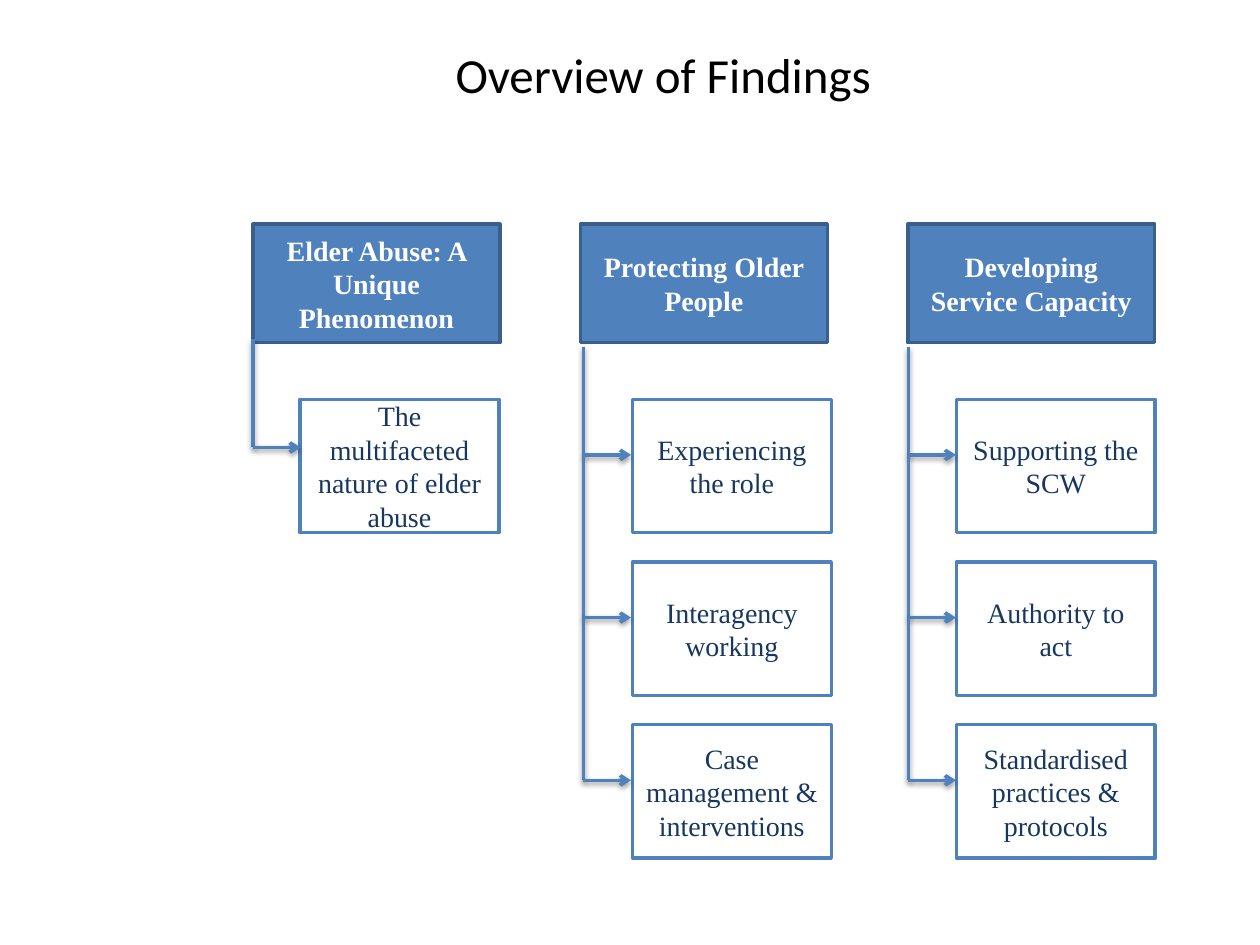
import pptx
import pptx.util
import pptx.dml.color
import pptx.enum.shapes
import pptx.enum.text
import pptx.oxml
import pptx.oxml.ns
from pptx.util import Cm, Pt

TITLE = "Overview of Findings"

# Lengths in centimetres: trunk and children are the left edges below each heading.
COLUMNS = [
    {"heading": "Elder Abuse: A Unique Phenomenon", "trunk": 5.1, "children": 6.05,
     "trunk_top": 6.84,
     "topics": ["The multifaceted nature of elder abuse"]},
    {"heading": "Protecting Older People", "trunk": 11.76, "children": 12.75,
     "trunk_top": 6.99,
     "topics": ["Experiencing the role", "Interagency working",
                "Case management & interventions"]},
    {"heading": "Developing Service Capacity", "trunk": 18.31, "children": 19.28,
     "trunk_top": 6.99,
     "topics": ["Supporting the SCW", "Authority to act",
                "Standardised practices & protocols"]},
]

THEME = {
    "title_font": "Calibri", "body_font": "Times New Roman",
    "title_size": 28, "body_size": 16, "line_width": 2,
    "blue": "4F81BD", "dark_blue": "3A5F8C", "navy": "17375E",
    "white": "FFFFFF", "black": "000000",
}

HEADING_LEFT, HEADING_TOP, HEADING_PITCH = 5.1, 4.52, 6.6
HEADING_WIDTH, HEADING_HEIGHT = 4.98, 2.39
TOPIC_TOP, TOPIC_PITCH = 8.05, 3.28
TOPIC_WIDTH, TOPIC_HEIGHT = 4.01, 2.69
FIRST_DROP = 2.18
BRANCH_LENGTH = 0.96

SHADOW = (
    f'<a:effectLst {pptx.oxml.ns.nsdecls("a")}>'
    '<a:outerShdw blurRad="39370" dist="20320" dir="5400000" rotWithShape="0">'
    '<a:srgbClr val="000000"><a:alpha val="38000"/></a:srgbClr>'
    '</a:outerShdw></a:effectLst>'
)
ARROWHEAD = f'<a:tailEnd {pptx.oxml.ns.nsdecls("a")} type="arrow"/>'


def color(name):
    return pptx.dml.color.RGBColor.from_string(THEME[name])


def format_text(text_frame, font_name, size, color_name, bold=False):
    paragraph = text_frame.paragraphs[0]
    paragraph.alignment = pptx.enum.text.PP_ALIGN.CENTER
    font = paragraph.runs[0].font
    font.name = THEME[font_name]
    font.size = Pt(THEME[size])
    font.bold = bold
    font.color.rgb = color(color_name)


def add_box(slide, text, left, top, width, height, fill, line, text_color, bold=False):
    shape = slide.shapes.add_shape(
        pptx.enum.shapes.MSO_SHAPE.RECTANGLE, Cm(left), Cm(top), Cm(width), Cm(height))
    shape.shadow.inherit = False
    shape.fill.solid()
    shape.fill.fore_color.rgb = color(fill)
    shape.line.color.rgb = color(line)
    shape.line.width = Pt(THEME["line_width"])
    text_frame = shape.text_frame
    text_frame.text = text
    text_frame.word_wrap = True
    text_frame.vertical_anchor = pptx.enum.text.MSO_ANCHOR.MIDDLE
    format_text(text_frame, "body_font", "body_size", text_color, bold)


def add_line(slide, start, end, arrow=False):
    connector = slide.shapes.add_connector(
        pptx.enum.shapes.MSO_CONNECTOR.STRAIGHT, *map(Cm, start + end))
    connector.line.color.rgb = color("blue")
    connector.line.width = Pt(THEME["line_width"])
    if arrow:
        connector.line._get_or_add_ln().append(pptx.oxml.parse_xml(ARROWHEAD))
    connector._element.spPr.append(pptx.oxml.parse_xml(SHADOW))


def add_title(slide):
    title = slide.shapes.title
    title.left, title.top, title.width, title.height = map(Cm, (2.64, 0.76, 21.46, 3.18))
    text_frame = title.text_frame
    text_frame.text = TITLE
    text_frame.vertical_anchor = pptx.enum.text.MSO_ANCHOR.TOP
    text_frame.auto_size = pptx.enum.text.MSO_AUTO_SIZE.NONE
    format_text(text_frame, "title_font", "title_size", "black")


def add_column(slide, index, column):
    add_box(slide, column["heading"], HEADING_LEFT + index * HEADING_PITCH, HEADING_TOP,
            HEADING_WIDTH, HEADING_HEIGHT, "blue", "dark_blue", "white", bold=True)
    trunk = column["trunk"]
    previous = column["trunk_top"]
    for row, topic in enumerate(column["topics"]):
        add_box(slide, topic, column["children"], TOPIC_TOP + row * TOPIC_PITCH,
                TOPIC_WIDTH, TOPIC_HEIGHT, "white", "blue", "navy")
        branch = column["trunk_top"] + FIRST_DROP + row * TOPIC_PITCH
        add_line(slide, (trunk, previous), (trunk, branch))
        add_line(slide, (trunk, branch), (trunk + BRANCH_LENGTH, branch), arrow=True)
        previous = branch


def main():
    presentation = pptx.Presentation()
    presentation.slide_width, presentation.slide_height = Cm(25.4), Cm(19.05)
    title_only = presentation.slide_layouts[5]
    slide = presentation.slides.add_slide(title_only)
    add_title(slide)
    for index, column in enumerate(COLUMNS):
        add_column(slide, index, column)
    presentation.save("out.pptx")


if __name__ == "__main__":
    main()
